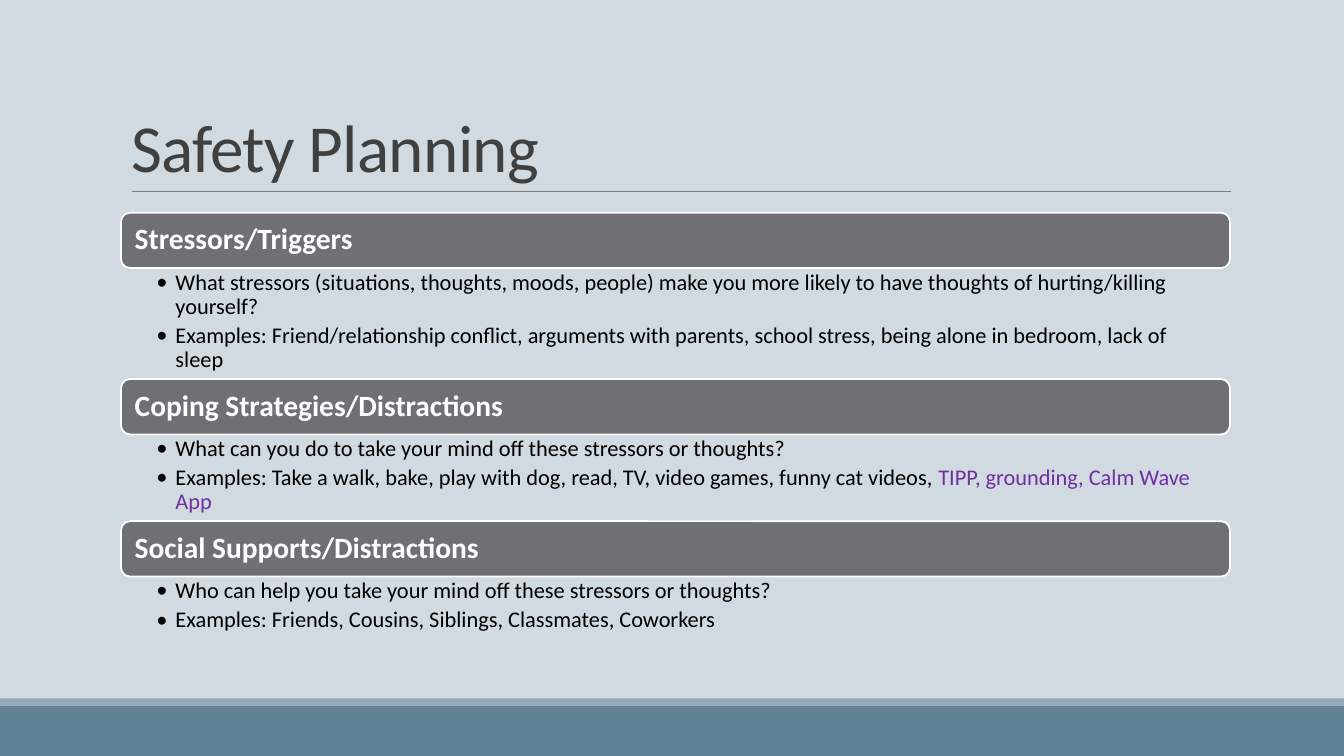
from dataclasses import dataclass

from lxml import etree
from pptx import Presentation
from pptx import util as u
from pptx.dml.color import RGBColor
from pptx.enum import shapes, text
from pptx.oxml import ns


@dataclass(frozen=True)
class Theme:
    """Colours, type sizes and font of the slide."""
    back: str = "D1D9E1"
    foot: str = "618197"
    edge: str = "92A9B9"
    rule: str = "808080"
    title: str = "404040"
    bar: str = "6F6F74"
    white: str = "FFFFFF"
    ink: str = "000000"
    mark: str = "7030A0"
    font: str = "Calibri"
    big: int = 48
    head: int = 21
    body: int = 16


T = Theme()
WIDE, HIGH = 1333, 750
BAR = 55
PARTS = [
    ("Stressors/Triggers", 110, [
        [("What stressors (situations, thoughts, moods, people) make you more "
          "likely to have thoughts of hurting/killing yourself?", T.ink)],
        [("Examples: Friend/relationship conflict, arguments with parents, "
          "school stress, being alone in bedroom, lack of sleep", T.ink)]]),
    ("Coping Strategies/Distractions", 86, [
        [("What can you do to take your mind off these stressors or thoughts?",
          T.ink)],
        [("Examples: Take a walk, bake, play with dog, read, TV, video games, "
          "funny cat videos, ", T.ink),
         ("TIPP, grounding, Calm Wave App", T.mark)]]),
    ("Social Supports/Distractions", 61, [
        [("Who can help you take your mind off these stressors or thoughts?",
          T.ink)],
        [("Examples: Friends, Cousins, Siblings, Classmates, Coworkers",
          T.ink)]]),
]


def px(n):
    """Turn px into EMU, at 100 px to the inch."""
    return u.Emu(n * 9144)


def rgb(code):
    """Turn a hex code into a colour."""
    return RGBColor.from_string(code)


def place(shape, box):
    """Move a shape to a box given in px."""
    shape.left, shape.top, shape.width, shape.height = map(px, box)


def frame(shape, pad, anchor):
    """Set insets, anchor and wrapping, and return the text frame."""
    tf = shape.text_frame
    tf.margin_left, tf.margin_top, tf.margin_right, tf.margin_bottom = map(px, pad)
    tf.vertical_anchor = anchor
    tf.word_wrap = True
    tf.auto_size = text.MSO_AUTO_SIZE.NONE
    return tf


def write(para, runs, size, bold=False, lead=0.9, after=0, track=0, dot=False):
    """Fill a paragraph with (words, colour) runs in one format."""
    para.alignment = text.PP_ALIGN.LEFT
    para.line_spacing = lead
    para.space_before, para.space_after = u.Pt(0), u.Pt(after)
    for words, tint in runs:
        run = para.add_run()
        run.text = words
        run.font.name, run.font.size, run.font.bold = T.font, u.Pt(size), bold
        run.font.color.rgb = rgb(tint)
        if track:
            run.font._element.set("spc", str(track))
    if dot:
        prop = para._p.get_or_add_pPr()
        prop.set("marL", str(px(19)))
        prop.set("indent", str(px(-19)))
        etree.SubElement(prop, ns.qn("a:buFont")).set("typeface", T.font)
        etree.SubElement(prop, ns.qn("a:buChar")).set("char", "•")


def block(slide, kind, box, fill, line=None):
    """Draw a filled preset shape."""
    shape = slide.shapes.add_shape(kind, *map(px, box))
    shape.shadow.inherit = False
    shape.fill.solid()
    shape.fill.fore_color.rgb = rgb(fill)
    if line:
        shape.line.color.rgb = rgb(line)
        shape.line.width = u.Pt(1.25)
    else:
        shape.line.fill.background()
    return shape


def footer(slide, box):
    """Draw the bottom band with its thin upper edge."""
    x, y, w, h = box
    block(slide, shapes.MSO_SHAPE.RECTANGLE, (x, y + 7, w, h - 7), T.foot)
    block(slide, shapes.MSO_SHAPE.RECTANGLE, (x, y, w, 7), T.edge)


def header(slide, box):
    """Set the title and the rule under it."""
    x, y, w, h = box
    title = slide.shapes.title
    place(title, box)
    tf = frame(title, (10, 5, 10, 5), text.MSO_ANCHOR.BOTTOM)
    write(tf.paragraphs[0], [("Safety Planning", T.title)], T.big,
          lead=0.85, track=-50)
    rule = slide.shapes.add_connector(
        shapes.MSO_CONNECTOR.STRAIGHT,
        px(x + 11), px(y + h), px(x + w + 1), px(y + h))
    rule.line.color.rgb = rgb(T.rule)
    rule.line.width = u.Pt(0.5)
    etree.SubElement(rule._element.spPr, ns.qn("a:effectLst"))


def section(slide, body, box, name, items):
    """Draw one heading bar with its bullet list below."""
    x, y, w, h = box
    bar = block(slide, shapes.MSO_SHAPE.ROUNDED_RECTANGLE, (x, y, w, BAR),
                T.bar, T.white)
    tf = frame(bar, (11, 9, 11, 9), text.MSO_ANCHOR.MIDDLE)
    write(tf.paragraphs[0], [(name, T.white)], T.head, bold=True)
    place(body, (x, y + BAR, w, h - BAR))
    tf = frame(body, (35, 3, 16, 3), text.MSO_ANCHOR.TOP)
    for i, runs in enumerate(items):
        para = tf.add_paragraph() if i else tf.paragraphs[0]
        write(para, runs, T.body, after=3.5, dot=True)


def main():
    """Build the slide and save it."""
    deck = Presentation()
    deck.slide_width, deck.slide_height = px(WIDE), px(HIGH)
    slide = deck.slides.add_slide(deck.slide_layouts.get_by_name("Comparison"))
    slide.background.fill.solid()
    slide.background.fill.fore_color.rgb = rgb(T.back)
    bodies = list(slide.placeholders)[1:]
    footer(slide, (0, 693, WIDE, 57))
    header(slide, (120, 31, 1100, 159))
    top = 211
    for body, (name, high, items) in zip(bodies, PARTS):
        section(slide, body, (120, top, 1100, BAR + high), name, items)
        top += BAR + high
    for spare in bodies[len(PARTS):]:
        spare.element.getparent().remove(spare.element)
    deck.save("out.pptx")


if __name__ == "__main__":
    main()
